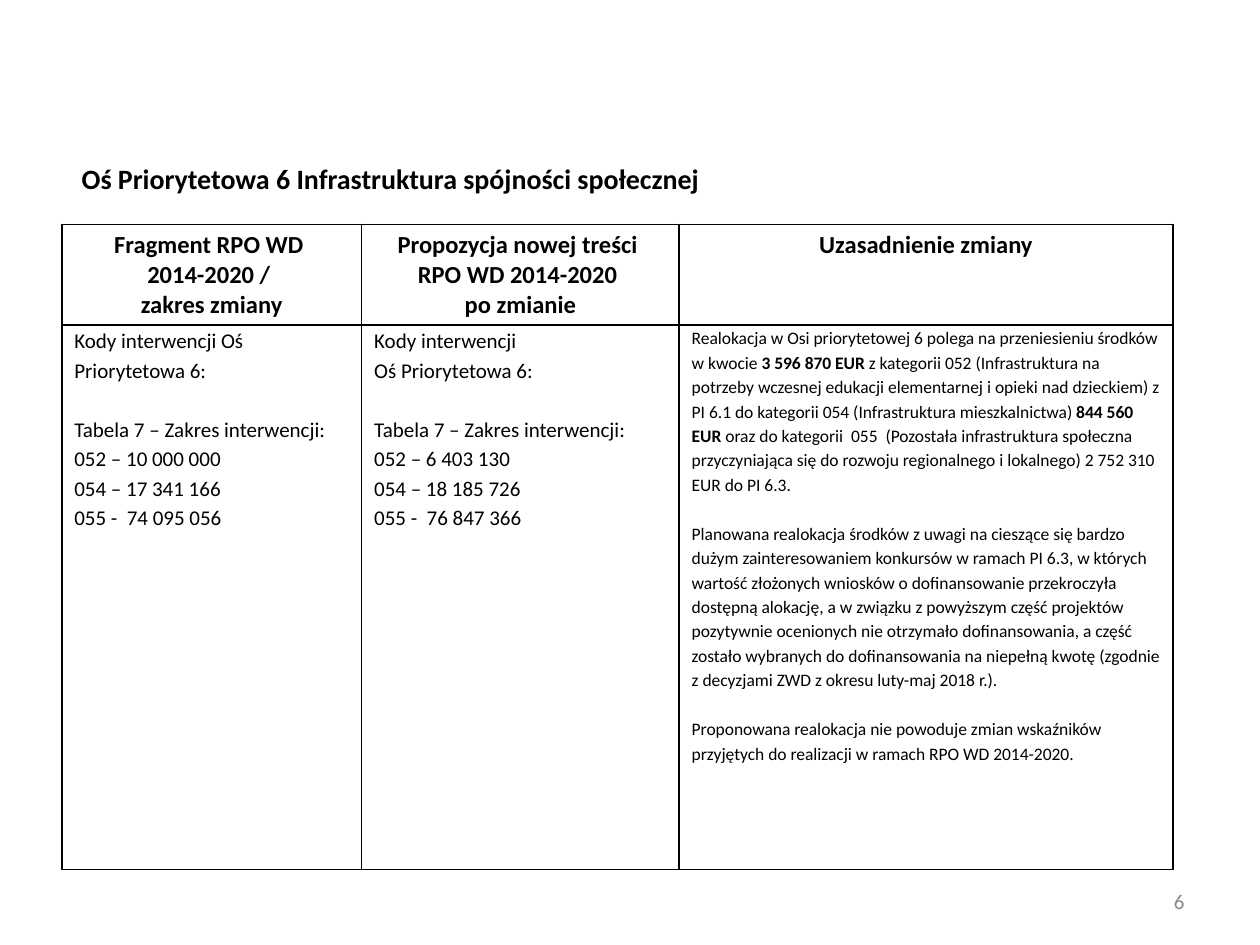
"""Build the slide on reallocation of funds in Priority Axis 6."""
from copy import deepcopy

from lxml.etree import SubElement
from pptx import Presentation
from pptx.dml.color import RGBColor
from pptx.enum.text import MSO_ANCHOR as Anchor, PP_ALIGN as Align
from pptx.oxml.ns import qn
from pptx.util import Inches, Pt

BLACK = RGBColor(0x00, 0x00, 0x00)
GREY = RGBColor(0x89, 0x89, 0x89)
COLUMNS = [2.38, 2.52, 3.92]
ROWS = [0.8, 4.32]
LINE_SPACING = 1.15
BLANK_LINE = 1.22 * LINE_SPACING

headings = [
    "Fragment RPO WD \v2014-2020 / \vzakres zmiany",
    "Propozycja nowej treści \vRPO WD 2014-2020 \vpo zmianie",
    "Uzasadnienie zmiany",
]
current_codes = [
    ["Kody interwencji Oś Priorytetowa 6:"],
    ["Tabela 7 – Zakres interwencji:", "052 – 10 000 000",
     "054 – 17 341 166", "055 -  74 095 056"],
]
proposed_codes = [
    ["Kody interwencji", "Oś Priorytetowa 6:"],
    ["Tabela 7 – Zakres interwencji:  052 – 6 403 130",
     "054 – 18 185 726", "055 -  76 847 366"],
]
justification = [
    ["Realokacja w Osi priorytetowej 6 polega na przeniesieniu środków w kwocie "
     "*3 596 870 EUR *z kategorii 052 (Infrastruktura na potrzeby wczesnej edukacji "
     "elementarnej i opieki nad dzieckiem) z PI 6.1 do kategorii 054 (Infrastruktura "
     "mieszkalnictwa) *844 560 EUR *oraz do kategorii  055  (Pozostała infrastruktura "
     "społeczna przyczyniająca się do rozwoju regionalnego i lokalnego) 2 752 310 EUR "
     "do PI 6.3."],
    ["Planowana realokacja środków z uwagi na cieszące się bardzo dużym zainteresowaniem "
     "konkursów w ramach PI 6.3, w których wartość złożonych wniosków o dofinansowanie "
     "przekroczyła dostępną alokację, a w związku z powyższym część projektów pozytywnie "
     "ocenionych nie otrzymało dofinansowania, a część zostało wybranych do "
     "dofinansowania na niepełną kwotę (zgodnie z decyzjami ZWD z okresu luty-maj 2018 r.)."],
    ["Proponowana realokacja nie powoduje zmian wskaźników przyjętych do realizacji "
     "w ramach RPO WD 2014-2020."],
]


def style(run, size, bold=False, color=BLACK):
    for name, value in {"name": "Calibri", "size": Pt(size), "bold": bold}.items():
        setattr(run.font, name, value)
    run.font.color.rgb = color


def outline(cell):
    properties = cell._tc.get_or_add_tcPr()
    for side in ("lnL", "lnR", "lnT", "lnB"):
        edge = SubElement(properties, qn(f"a:{side}"), w=str(Pt(1)))
        SubElement(SubElement(edge, qn("a:solidFill")), qn("a:srgbClr"), val=str(BLACK))
    cell.fill.background()


deck = Presentation()
deck.slide_width, deck.slide_height = Inches(10), Inches(7.5)
slide = deck.slides.add_slide(deck.slide_layouts[6])

for text, box, size, bold, color, align, anchor in [
    ("Oś Priorytetowa 6 Infrastruktura spójności społecznej",
     (0.55, 1.23, 9.45, 0.55), 16, True, BLACK, Align.LEFT, Anchor.TOP),
    ("6", (7.17, 6.95, 2.33, 0.4), 12, False, GREY, Align.RIGHT, Anchor.MIDDLE),
]:
    frame = slide.shapes.add_textbox(*map(Inches, box)).text_frame
    frame.word_wrap = True
    frame.vertical_anchor = anchor
    line = frame.paragraphs[0]
    line.text = text
    line.alignment = align
    style(line.runs[0], size, bold, color)

changes = slide.shapes.add_table(
    len(ROWS), len(COLUMNS), Inches(0.49), Inches(1.78),
    Inches(sum(COLUMNS)), Inches(sum(ROWS))).table
changes.first_row = changes.horz_banding = False
for column, width in zip(changes.columns, COLUMNS):
    column.width = Inches(width)
for row, height in zip(changes.rows, ROWS):
    row.height = Inches(height)
for cell in changes.iter_cells():
    outline(cell)

for index, heading in enumerate(headings):
    line = changes.cell(0, index).text_frame.paragraphs[0]
    line.text = heading
    line.alignment = Align.CENTER
    for run in line.runs:
        style(run, 14, True)
    for line_break in line._p.findall(qn("a:br")):
        line_break.append(deepcopy(line.runs[0]._r.rPr))

for index, (groups, size) in enumerate(
        [(current_codes, 12), (proposed_codes, 12), (justification, 10)]):
    cell = changes.cell(1, index)
    cell.margin_top = cell.margin_bottom = 0
    frame = cell.text_frame
    for group_index, group in enumerate(groups):
        for line_index, text in enumerate(group):
            is_first = group_index == line_index == 0
            line = frame.paragraphs[0] if is_first else frame.add_paragraph()
            line.line_spacing = LINE_SPACING
            if group_index and not line_index:
                line.space_before = Pt(round(size * BLANK_LINE, 1))
            for part_index, part in enumerate(text.split("*")):
                run = line.add_run()
                run.text = part
                style(run, size, part_index % 2 == 1)

deck.save("out.pptx")
